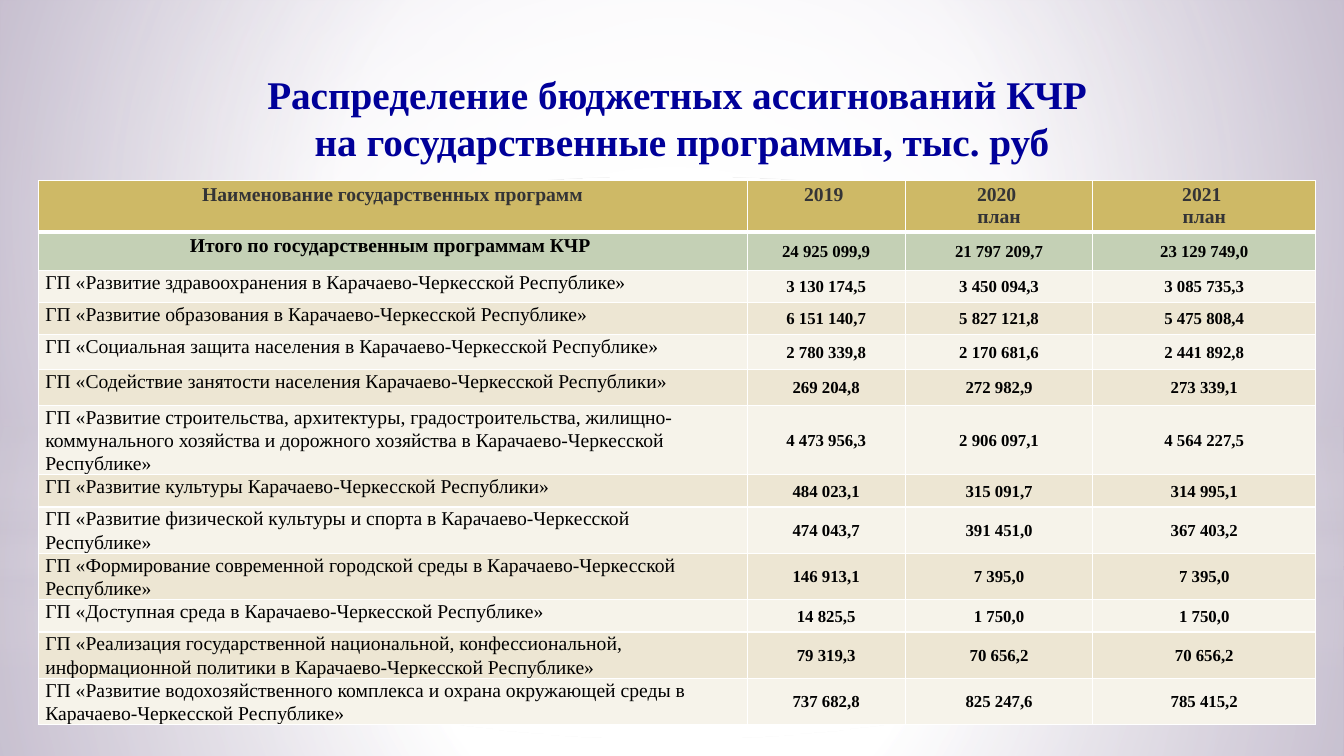
from typing import NamedTuple

from lxml import etree
from pptx import Presentation
from pptx.dml.color import RGBColor
from pptx.enum.shapes import MSO_SHAPE
from pptx.enum.text import MSO_ANCHOR, MSO_AUTO_SIZE, PP_ALIGN
from pptx.oxml import parse_xml
from pptx.oxml.ns import nsdecls, qn
from pptx.util import Inches, Pt

RECT, OVAL = MSO_SHAPE.RECTANGLE, MSO_SHAPE.OVAL
LEFT, CENTER = PP_ALIGN.LEFT, PP_ALIGN.CENTER
TOP, MIDDLE = MSO_ANCHOR.TOP, MSO_ANCHOR.MIDDLE
FIT_SHAPE = MSO_AUTO_SIZE.SHAPE_TO_FIT_TEXT

SLIDE_WIDTH, SLIDE_HEIGHT = 13.33, 7.5
FONT = "Times New Roman"
WHITE, LILAC = "FFFFFF", "C9C2D1"
NAVY, GRAPHITE, BLACK = "000099", "343436", "000000"
GOLD, SAGE = "CEB966", "C4D0B5"
BANDS = ("F6F3EA", "EDE6D3")


class Stop(NamedTuple):
    position: int
    color: str
    opacity: int = 100


class Glow(NamedTuple):
    preset: int
    top: float
    height: float
    stops: tuple[Stop, ...]
    focus: tuple[int, ...] | None = (50, 50, 50, 50)


class Program(NamedTuple):
    name: str
    amounts: tuple[str, str, str]
    height: float


class CellStyle(NamedTuple):
    fill: str
    size: int
    color: str
    bold: bool
    align: int
    anchor: int
    spacing: float | None = 1.07
    side_margin: float = 0.07
    end_margin: float = 0
    bottom_border: int = 1


def halo(middle: int, opacities: tuple[int, int, int]) -> tuple[Stop, ...]:
    return tuple(map(Stop, (0, middle, 100), (WHITE, WHITE, LILAC), opacities))


HORIZON = tuple(map(Stop, (0, 29, 45, 55, 65, 100),
                    (WHITE, WHITE, LILAC, WHITE, LILAC, WHITE),
                    (0, 30, 40, 26, 60, 0)))
GLOWS = (
    Glow(RECT, 5.58, 1.92, halo(37, (91, 76, 79))),
    Glow(RECT, 0, 5.58, halo(48, (89, 62, 79))),
    Glow(RECT, 4.12, 2.5, HORIZON, None),
    Glow(OVAL, 1.75, 5.58, (Stop(0, WHITE), Stop(56, WHITE, 0))),
    Glow(RECT, 4.23, 3.27, halo(37, (92, 77, 80))),
    Glow(RECT, 0, 4.23, halo(48, (90, 63, 80))),
    Glow(RECT, 2.9, 2.5, HORIZON, None),
    Glow(OVAL, 1.75, 5.58, (Stop(0, WHITE), Stop(54, WHITE, 0))),
)
BACKDROP = (Stop(0, WHITE), Stop(42, WHITE), Stop(100, "A593BA"))

TITLE = ("Распределение бюджетных ассигнований КЧР",
         " на государственные программы, тыс. руб")
HEADER = Program("Наименование государственных программ",
                 ("2019 ", "2020 \nплан", "2021 \nплан"), 0.51)
TOTAL = Program("Итого по государственным программам КЧР ",
                ("24 925 099,9", "21 797 209,7", "23 129 749,0"), 0.38)
PROGRAMS = (
    Program("ГП «Развитие здравоохранения в Карачаево-Черкесской Республике»",
            ("3 130 174,5", "3 450 094,3", "3 085 735,3"), 0.32),
    Program("ГП «Развитие образования в Карачаево-Черкесской Республике»",
            ("6 151 140,7", "5 827 121,8", "5 475 808,4"), 0.32),
    Program("ГП «Социальная защита населения в Карачаево-Черкесской Республике»",
            ("2 780 339,8", "2 170 681,6", "2 441 892,8"), 0.35),
    Program("ГП «Содействие занятости населения Карачаево-Черкесской Республики»",
            ("269 204,8", "272 982,9", "273 339,1"), 0.35),
    Program("ГП «Развитие строительства, архитектуры, градостроительства, "
            "жилищно-коммунального хозяйства и дорожного хозяйства в "
            "Карачаево-Черкесской Республике»",
            ("4 473 956,3", "2 906 097,1", "4 564 227,5"), 0.69),
    Program("ГП «Развитие культуры Карачаево-Черкесской Республики»",
            ("484 023,1", "315 091,7", "314 995,1"), 0.32),
    Program("ГП «Развитие физической культуры и спорта в "
            "Карачаево-Черкесской Республике»",
            ("474 043,7", "391 451,0", "367 403,2"), 0.46),
    Program("ГП «Формирование современной городской среды в "
            "Карачаево-Черкесской Республике»",
            ("146 913,1", "7 395,0", "7 395,0"), 0.46),
    Program("ГП «Доступная среда в Карачаево-Черкесской Республике»",
            ("14 825,5", "1 750,0", "1 750,0"), 0.32),
    Program("ГП «Реализация государственной национальной, конфессиональной, "
            "информационной политики в Карачаево-Черкесской Республике»",
            ("79 319,3", "70 656,2", "70 656,2"), 0.46),
    Program("ГП «Развитие водохозяйственного комплекса и охрана окружающей "
            "среды в Карачаево-Черкесской Республике»",
            ("737 682,8", "825 247,6", "785 415,2"), 0.46),
)
COLUMN_WIDTHS = (7.03, 1.57, 1.86, 2.21)

HEADER_STYLE = CellStyle(GOLD, 14, GRAPHITE, True, CENTER, TOP, None,
                         end_margin=0.04, bottom_border=3)
TOTAL_STYLE = CellStyle(SAGE, 14, BLACK, True, CENTER, TOP, 1.15, 0.06)
NAME_STYLE = CellStyle(BANDS[0], 14, BLACK, False, LEFT, TOP)
AMOUNT_STYLE = CellStyle(BANDS[0], 12, BLACK, True, CENTER, MIDDLE)


def rgb(color: str) -> RGBColor:
    return RGBColor.from_string(color)


def set_gradient(properties, stops: tuple[Stop, ...], focus) -> None:
    """Swap a solid fill for a gradient: circular with a focus, else vertical."""
    marks = "".join(
        f'<a:gs pos="{stop.position * 1000}"><a:srgbClr val="{stop.color}">'
        f'<a:alpha val="{stop.opacity * 1000}"/></a:srgbClr></a:gs>'
        for stop in stops)
    direction = '<a:lin ang="5400000" scaled="0"/>'
    if focus:
        sides = " ".join(f'{side}="{inset * 1000}"'
                         for side, inset in zip("ltrb", focus))
        direction = f'<a:path path="circle"><a:fillToRect {sides}/></a:path>'
    solid = properties.find(qn("a:solidFill"))
    properties.replace(solid, parse_xml(
        f'<a:gradFill {nsdecls("a")} rotWithShape="1">'
        f'<a:gsLst>{marks}</a:gsLst>{direction}</a:gradFill>'))


def draw_backdrop(slide) -> None:
    slide.background.fill.solid()
    slide.background.fill.fore_color.rgb = rgb(WHITE)
    set_gradient(slide.element.cSld.bg.bgPr, BACKDROP, (24, 44, 24, 12))
    for glow in GLOWS:
        light = slide.shapes.add_shape(glow.preset, 0, Inches(glow.top),
                                       Inches(SLIDE_WIDTH), Inches(glow.height))
        light.shadow.inherit = False
        light.line.fill.background()
        light.fill.solid()
        set_gradient(light.element.spPr, glow.stops, glow.focus)


def format_text(paragraph, size: int, color: str, bold: bool, align: int) -> None:
    paragraph.alignment = align
    for run in paragraph.runs:
        for key, value in {"name": FONT, "size": Pt(size), "bold": bold}.items():
            setattr(run.font, key, value)
        run.font.color.rgb = rgb(color)


def fill_cell(cell, text: str, style: CellStyle) -> None:
    cell.text = text
    side, end = Inches(style.side_margin), Inches(style.end_margin)
    for key, value in {"margin_left": side, "margin_right": side,
                       "margin_top": end, "margin_bottom": end,
                       "vertical_anchor": style.anchor}.items():
        setattr(cell, key, value)
    for paragraph in cell.text_frame.paragraphs:
        format_text(paragraph, style.size, style.color, style.bold, style.align)
        paragraph.line_spacing = style.spacing
    properties = cell._tc.get_or_add_tcPr()
    for edge in "LRTB":
        points = style.bottom_border if edge == "B" else 1
        border = etree.SubElement(properties, qn(f"a:ln{edge}"), w=str(Pt(points)))
        paint = etree.SubElement(border, qn("a:solidFill"))
        etree.SubElement(paint, qn("a:srgbClr"), val=WHITE)
    cell.fill.solid()
    cell.fill.fore_color.rgb = rgb(style.fill)


def draw_budget(slide) -> None:
    lines = [(HEADER, HEADER_STYLE, HEADER_STYLE),
             (TOTAL, TOTAL_STYLE, AMOUNT_STYLE._replace(fill=SAGE))]
    for index, program in enumerate(PROGRAMS):
        band = BANDS[index % 2]
        lines.append((program, NAME_STYLE._replace(fill=band),
                      AMOUNT_STYLE._replace(fill=band)))
    height = sum(program.height for program, _, _ in lines)
    budget = slide.shapes.add_table(
        len(lines), len(COLUMN_WIDTHS), Inches(0.38), Inches(1.79),
        Inches(sum(COLUMN_WIDTHS)), Inches(height)).table
    for column, width in zip(budget.columns, COLUMN_WIDTHS):
        column.width = Inches(width)
    for row, (program, name_style, amount_style) in zip(budget.rows, lines):
        row.height = Inches(program.height)
        name_cell, *amount_cells = row.cells
        fill_cell(name_cell, program.name, name_style)
        for cell, amount in zip(amount_cells, program.amounts):
            fill_cell(cell, amount, amount_style)


def draw_title(slide) -> None:
    title = slide.shapes.title
    for key, value in {"left": 2.51, "top": 0.65,
                       "width": 8.41, "height": 1.04}.items():
        setattr(title, key, Inches(value))
    frame = title.text_frame
    frame.text = "\n".join(TITLE)
    for key, value in {"word_wrap": False, "auto_size": FIT_SHAPE,
                       "vertical_anchor": TOP}.items():
        setattr(frame, key, value)
    for paragraph in frame.paragraphs:
        format_text(paragraph, 28, NAVY, True, CENTER)
        paragraph.space_before = Pt(0)
    slide.shapes.element.append(title.element)


def main() -> None:
    deck = Presentation()
    deck.slide_width, deck.slide_height = Inches(SLIDE_WIDTH), Inches(SLIDE_HEIGHT)
    slide = deck.slides.add_slide(deck.slide_layouts[5])
    draw_backdrop(slide)
    draw_budget(slide)
    draw_title(slide)
    deck.save("out.pptx")


if __name__ == "__main__":
    main()
